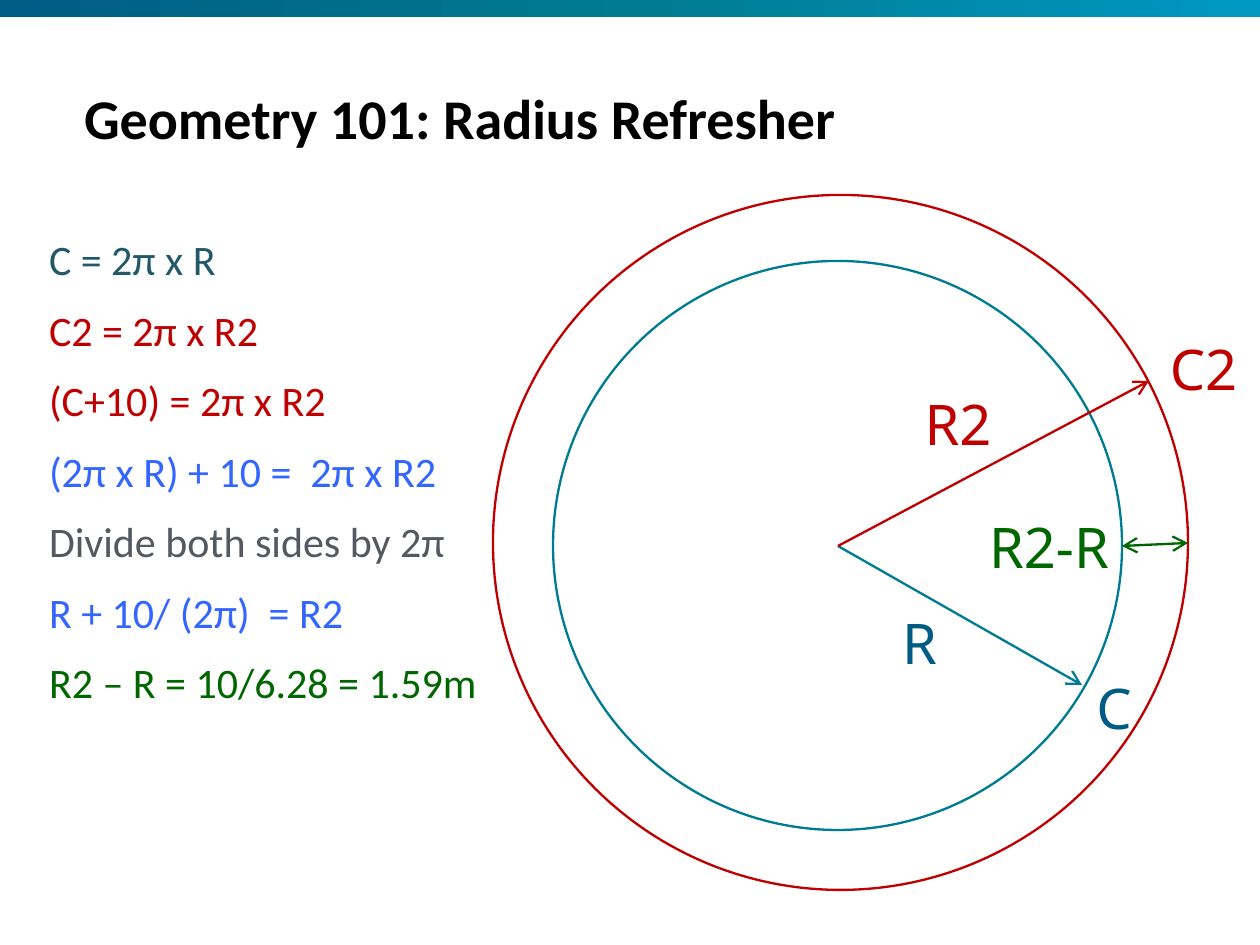
from copy import deepcopy

from lxml import etree
from pptx import Presentation
from pptx.dml.color import RGBColor
from pptx.enum.shapes import MSO_CONNECTOR, MSO_SHAPE
from pptx.enum.text import MSO_ANCHOR, MSO_AUTO_SIZE, PP_ALIGN
from pptx.oxml.ns import qn
from pptx.util import Emu, Pt

RECTANGLE, OVAL = MSO_SHAPE.RECTANGLE, MSO_SHAPE.OVAL
STRAIGHT = MSO_CONNECTOR.STRAIGHT
TOP, LEFT, CENTER = MSO_ANCHOR.TOP, PP_ALIGN.LEFT, PP_ALIGN.CENTER
NO_AUTOFIT = MSO_AUTO_SIZE.NONE

PX = 914400 / 168
TEAL, RED, GREEN, NAVY, BLUE = "007C92", "C00000", "006600", "005C84", "3366FF"


def px(*lengths):
    return [Emu(round(length * PX)) for length in lengths]


def add_span(para, text, font, size, color, bold=False):
    span = para.add_run()
    span.text = text
    span.font.name = font
    span.font.size = Pt(size)
    span.font.bold = bold
    span.font.color.rgb = RGBColor.from_string(color)


deck = Presentation()
deck.slide_width, deck.slide_height = px(1260, 945)
page = deck.slides.add_slide(deck.slide_layouts[5])
shapes = page.shapes

# Gradient band along the top
band = shapes.add_shape(RECTANGLE, *px(0, 0, 1260, 17))
band.shadow.inherit = False
band.line.fill.background()
band.fill.gradient()
band.fill.gradient_angle = 0
first_stop = band.fill._fill._gradFill.gsLst[0]
first_stop.addnext(deepcopy(first_stop))
band_stops = [(0, NAVY), (0.51, TEAL), (1, "0098C3")]
for stop, (position, color) in zip(band.fill.gradient_stops, band_stops):
    stop.position = position
    stop.color.rgb = RGBColor.from_string(color)

# Title and equations
title = shapes.title
title.left, title.top, title.width, title.height = px(84, 83, 932, 132)
equations = shapes.add_textbox(*px(49, 234, 650, 620))
for box in (title, equations):
    frame = box.text_frame
    frame.margin_left = frame.margin_right = 0
    frame.margin_top = frame.margin_bottom = 0
    frame.vertical_anchor = TOP
    frame.word_wrap = True
    frame.auto_size = NO_AUTOFIT

heading = title.text_frame.paragraphs[0]
heading.alignment = LEFT
add_span(heading, "Geometry 101: Radius Refresher", "Calibri", 24, "000000", True)

steps = [
    ("C = 2π x R", "215968"),
    ("C2 = 2π x R2", RED),
    ("(C+10) = 2π x R2", RED),
    ("(2π x R) + 10 =  2π x R2", BLUE),
    ("Divide both sides by 2π", "545861"),
    ("R + 10/ (2π)  = R2", BLUE),
    ("R2 – R = 10/6.28 = 1.59m", GREEN),
]
for index, (text, color) in enumerate(steps):
    frame = equations.text_frame
    para = frame.add_paragraph() if index else frame.paragraphs[0]
    para.space_before = Pt(8.6)
    add_span(para, text, "Calibri", 18, color)

# Circles: left, top, diameter
for left, top, diameter, color in [(553, 261, 569, TEAL), (493, 195, 695, RED)]:
    circle = shapes.add_shape(OVAL, *px(left, top, diameter, diameter))
    circle.shadow.inherit = False
    circle.fill.background()
    circle.line.color.rgb = RGBColor.from_string(color)
    circle.line.width = Pt(1)

# Radius arrows and the gap between the circles
arrows = [
    ((838, 546, 1082, 685), TEAL, ["tailEnd"]),
    ((838, 546, 1149, 381), RED, ["tailEnd"]),
    ((1122, 546, 1188, 543), GREEN, ["headEnd", "tailEnd"]),
]
for ends, color, heads in arrows:
    arrow = shapes.add_connector(STRAIGHT, *px(*ends))
    arrow.line.color.rgb = RGBColor.from_string(color)
    arrow.line.width = Pt(1)
    for head in heads:
        etree.SubElement(arrow.line._get_or_add_ln(), qn(f"a:{head}")).set("type", "arrow")
    etree.SubElement(arrow._element.spPr, qn("a:effectLst"))

# Labels: left, top, width
labels = [
    ("R", 885, 600, 69, NAVY),
    ("C", 1077, 665, 74, NAVY),
    ("R2", 905, 381, 106, RED),
    ("R2-R", 969, 504, 160, GREEN),
    ("C2", 1149, 326, 109, RED),
]
for text, left, top, width, color in labels:
    label = shapes.add_textbox(*px(left, top, width, 84))
    label.text_frame.word_wrap = False
    para = label.text_frame.paragraphs[0]
    para.alignment = CENTER
    add_span(para, text, "Noto Sans", 24, color)

deck.save("out.pptx")
